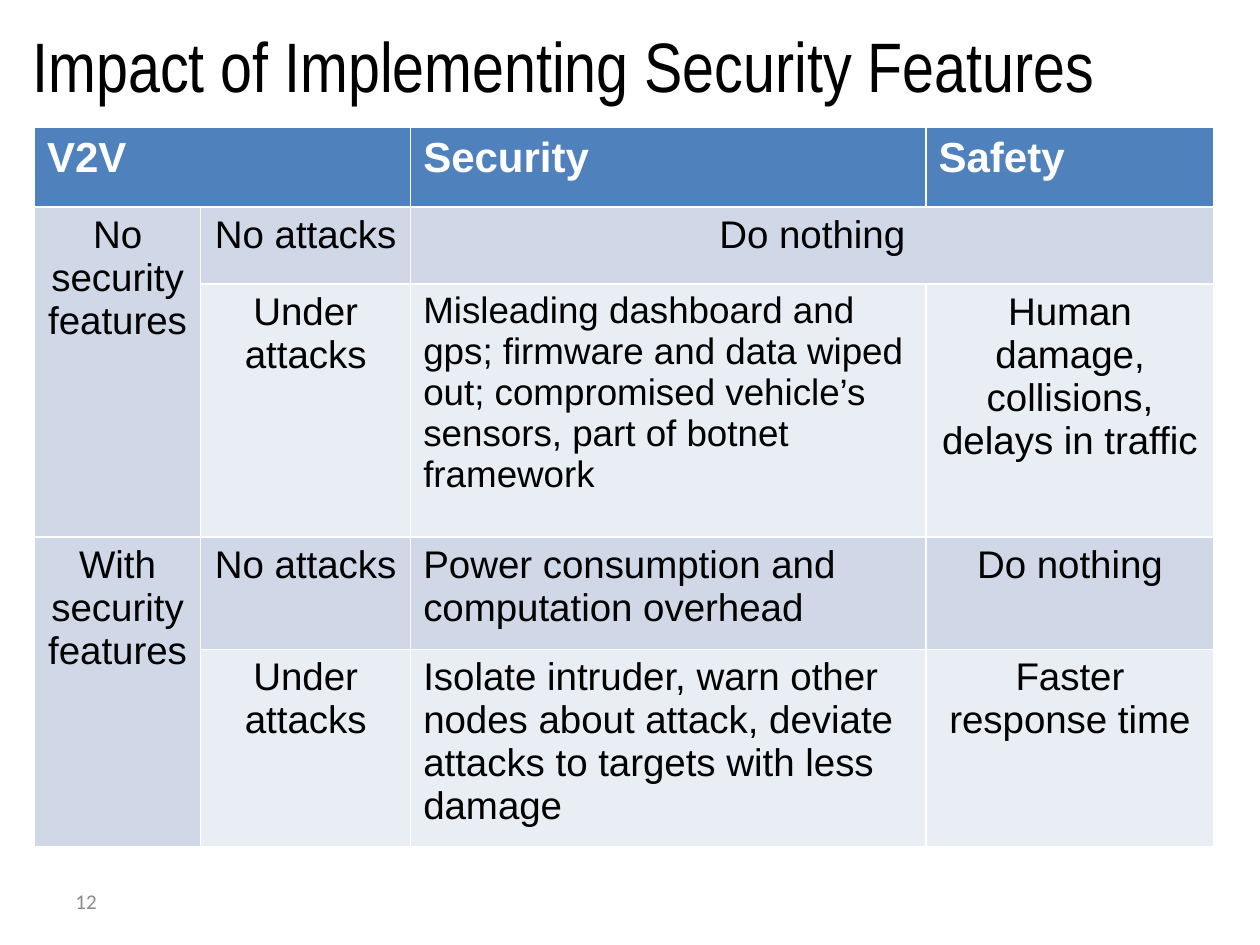
"""Build a slide with a table on the impact of implementing security features."""
from dataclasses import dataclass

from pptx import Presentation
from pptx.dml.color import RGBColor
from pptx.enum import text
from pptx.util import Pt

BLACK = RGBColor(0x00, 0x00, 0x00)
WHITE = RGBColor(0xFF, 0xFF, 0xFF)
GRAY = RGBColor(0x8B, 0x8B, 0x8B)
HEADER_BLUE = RGBColor(0x4F, 0x81, 0xBD)
BAND_DARK = RGBColor(0xD0, 0xD8, 0xE8)
BAND_LIGHT = RGBColor(0xE9, 0xED, 0xF4)

LEFT, CENTER = text.PP_ALIGN.LEFT, text.PP_ALIGN.CENTER
COLUMN_WIDTHS = (95, 120, 294.5, 164.5)
ROW_HEIGHTS = (45.4, 43.9, 144.7, 64.1, 106)
ROW_FILLS = (HEADER_BLUE, BAND_DARK, BAND_LIGHT, BAND_DARK, BAND_LIGHT)


@dataclass(frozen=True)
class Entry:
    row: int
    col: int
    words: str
    align: text.PP_ALIGN = CENTER
    size: float = 22
    rows: int = 1
    cols: int = 1


ENTRIES = (
    Entry(0, 0, "V2V", LEFT, 24, cols=2),
    Entry(0, 2, "Security", LEFT, 24),
    Entry(0, 3, "Safety", LEFT, 24),
    Entry(1, 0, "No security features", rows=2),
    Entry(1, 1, "No attacks"),
    Entry(1, 2, "Do nothing", cols=2),
    Entry(2, 1, "Under attacks"),
    Entry(2, 2, "Misleading dashboard and gps; firmware and data wiped out; "
          "compromised vehicle’s sensors, part of botnet framework", LEFT, 21),
    Entry(2, 3, "Human damage, collisions, delays in traffic"),
    Entry(3, 0, "With security features", rows=2),
    Entry(3, 1, "No attacks"),
    Entry(3, 2, "Power consumption and computation overhead", LEFT),
    Entry(3, 3, "Do nothing"),
    Entry(4, 1, "Under attacks"),
    Entry(4, 2, "Isolate intruder, warn other nodes about attack, "
          "deviate attacks to targets with less damage", LEFT),
    Entry(4, 3, "Faster response time"),
)


def write(tf, words: str, font: str, size: float, color: RGBColor,
          align: text.PP_ALIGN = LEFT, bold: bool = False) -> None:
    """Put one formatted paragraph into a text frame."""
    tf.text = words
    p = tf.paragraphs[0]
    p.alignment = align
    r = p.runs[0]
    r.font.name, r.font.size, r.font.bold = font, Pt(size), bold
    r.font.color.rgb = color


def add_title(s, words: str) -> None:
    """Place and format the title placeholder."""
    sp = s.shapes.title
    sp.left, sp.top, sp.width, sp.height = Pt(11.5), Pt(8), Pt(706), Pt(57.5)
    write(sp.text_frame, words, "Arial Narrow", 40, BLACK)


def add_number(s, words: str) -> None:
    """Add the slide number at the lower left."""
    sp = s.shapes.add_textbox(Pt(36), Pt(500.5), Pt(168), Pt(28.75))
    tf = sp.text_frame
    tf.word_wrap = True
    tf.vertical_anchor = text.MSO_ANCHOR.MIDDLE
    write(tf, words, "Calibri", 12, GRAY)


def add_impact_table(s) -> None:
    """Add the table with its banded rows and merged cells."""
    table = s.shapes.add_table(
        len(ROW_HEIGHTS), len(COLUMN_WIDTHS), Pt(19.7), Pt(73),
        Pt(sum(COLUMN_WIDTHS)), Pt(sum(ROW_HEIGHTS))).table
    for column, width in zip(table.columns, COLUMN_WIDTHS):
        column.width = Pt(width)
    for row, height, fill in zip(table.rows, ROW_HEIGHTS, ROW_FILLS):
        row.height = Pt(height)
        for cell in row.cells:
            cell.fill.solid()
            cell.fill.fore_color.rgb = fill
    for entry in ENTRIES:
        cell = table.cell(entry.row, entry.col)
        if entry.rows * entry.cols > 1:
            cell.merge(table.cell(entry.row + entry.rows - 1,
                                  entry.col + entry.cols - 1))
        header = entry.row == 0
        write(cell.text_frame, entry.words, "Arial", entry.size,
              WHITE if header else BLACK, entry.align, header)


def main() -> None:
    """Create the presentation and save it."""
    prs = Presentation()
    prs.slide_width, prs.slide_height = Pt(720), Pt(540)
    s = prs.slides.add_slide(prs.slide_layouts[5])
    add_title(s, "Impact of Implementing Security Features")
    add_number(s, "12")
    add_impact_table(s)
    prs.save("out.pptx")


if __name__ == "__main__":
    main()
